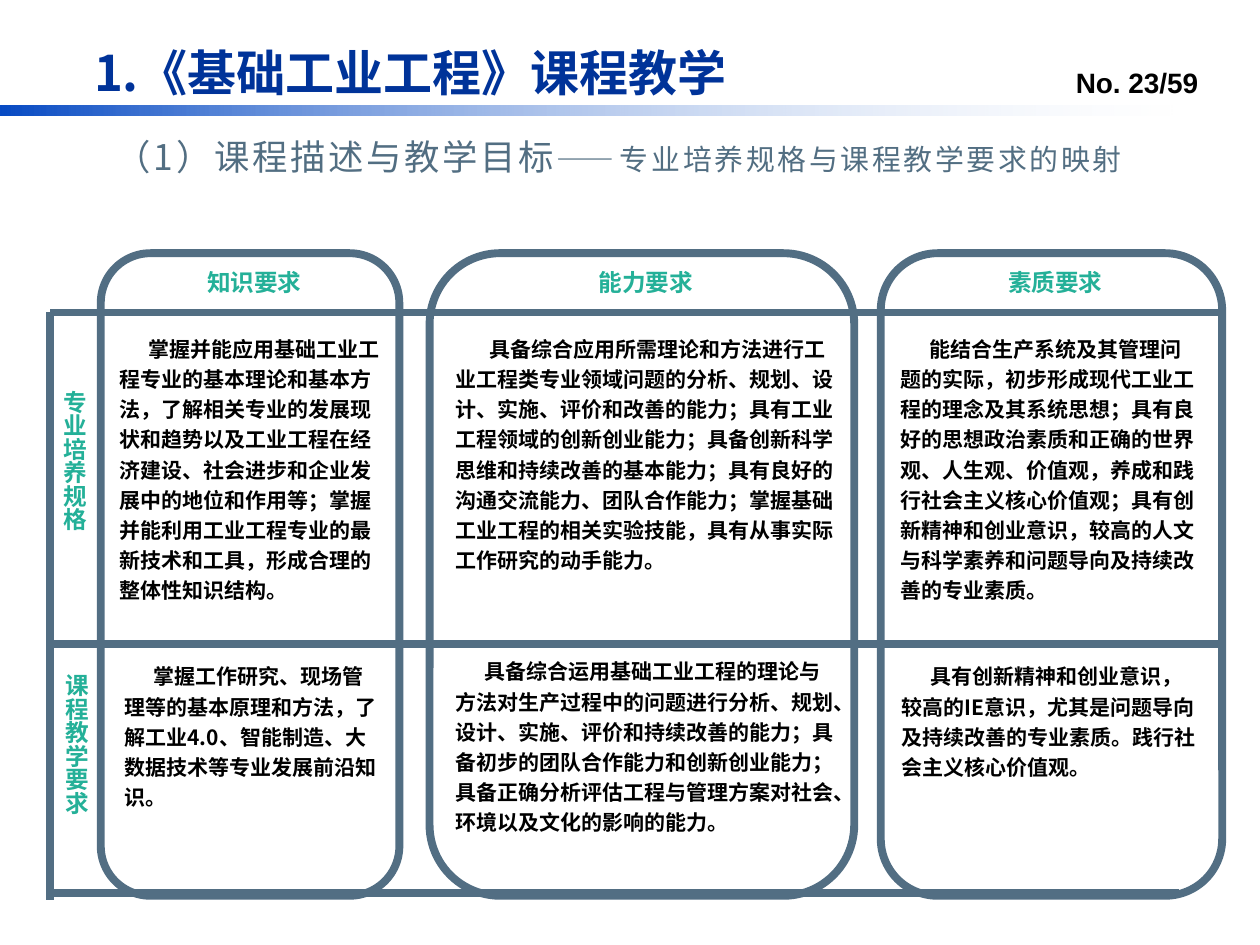
from dataclasses import dataclass

from lxml import etree
from pptx import Presentation
from pptx.dml.color import RGBColor
from pptx.enum.shapes import MSO_CONNECTOR, MSO_SHAPE
from pptx.enum.text import MSO_ANCHOR, MSO_AUTO_SIZE, PP_ALIGN
from pptx.oxml.ns import qn
from pptx.util import Inches, Pt

STRAIGHT = MSO_CONNECTOR.STRAIGHT
RECTANGLE = MSO_SHAPE.RECTANGLE
ROUNDED = MSO_SHAPE.ROUNDED_RECTANGLE
MIDDLE = MSO_ANCHOR.MIDDLE
FIT_TEXT = MSO_AUTO_SIZE.SHAPE_TO_FIT_TEXT
LEFT, CENTER, RIGHT = PP_ALIGN.LEFT, PP_ALIGN.CENTER, PP_ALIGN.RIGHT


@dataclass(frozen=True)
class Style:
    size: float
    color: str
    bold: bool = True
    font: str = "Noto Sans CJK SC"
    tracking: float = 0


@dataclass(frozen=True)
class Theme:
    frame: str = "526E83"
    frame_width: float = 4.5
    band_start: str = "084BC4"
    band_end: str = "D2DFF4"
    title: Style = Style(28, "003399")
    number: Style = Style(16, "000000", font="Arial")
    subtitle: Style = Style(20.2, "526E82", bold=False, tracking=1.6)
    subtitle_detail: Style = Style(16.5, "526E82", bold=False, tracking=1.6)
    label: Style = Style(13.5, "24B098")
    body: Style = Style(12, "000000")


@dataclass(frozen=True)
class Box:
    left: float
    top: float
    width: float
    height: float


@dataclass(frozen=True)
class Passage:
    box: Box
    text: str
    indent: float = 0.23


@dataclass(frozen=True)
class Column:
    heading: str
    left: float
    width: float
    passages: tuple[Passage, ...]


@dataclass(frozen=True)
class Rule:
    start: tuple[float, float]
    end: tuple[float, float]


THEME = Theme()
COLUMN_TOP, COLUMN_HEIGHT = 2.01, 5.1
HEADING_WIDTH, HEADING_SHIFT = 1.02, 0.07

COLUMNS = (
    Column("知识要求", 0.8, 2.37, (
        Passage(Box(0.85, 2.58, 2.32, 2.85),
                "掌握并能应用基础工业工程专业的基本理论和基本方法，了解相关专业的发展现状和趋势以及工业工程在经济建设、"
                "社会进步和企业发展中的地位和作用等；掌握并能利用工业工程专业的最新技术和工具，形成合理的整体性知识结构。"),
        Passage(Box(0.89, 5.18, 2.21, 1.64),
                "掌握工作研究、现场管理等的基本原理和方法，了解工业4.0、智能制造、大数据技术等专业发展前沿知识。"),
    )),
    Column("能力要求", 3.41, 3.37, (
        Passage(Box(3.52, 2.58, 3.2, 2.54),
                "具备综合应用所需理论和方法进行工业工程类专业领域问题的分析、规划、设计、实施、评价和改善的能力；"
                "具有工业工程领域的创新创业能力；具备创新科学思维和持续改善的基本能力；具有良好的沟通交流能力、"
                "团队合作能力；掌握基础工业工程的相关实验技能，具有从事实际工作研究的动手能力。", 0.27),
        Passage(Box(3.52, 5.14, 3.24, 1.94),
                "具备综合运用基础工业工程的理论与方法对生产过程中的问题进行分析、规划、设计、实施、评价和持续改善的能力；"
                "具备初步的团队合作能力和创新创业能力；具备正确分析评估工程与管理方案对社会、环境以及文化的影响的能力。"),
    )),
    Column("素质要求", 6.99, 2.71, (
        Passage(Box(7.05, 2.58, 2.59, 2.85),
                "能结合生产系统及其管理问题的实际，初步形成现代工业工程的理念及其系统思想；具有良好的思想政治素质和"
                "正确的世界观、人生观、价值观，养成和践行社会主义核心价值观；具有创新精神和创业意识，"
                "较高的人文与科学素养和问题导向及持续改善的专业素质。"),
        Passage(Box(7.06, 5.18, 2.59, 1.33),
                "具有创新精神和创业意识，较高的IE意识，尤其是问题导向及持续改善的专业素质。践行社会主义核心价值观。"),
    )),
)

ROW_LABELS = (
    (Box(0.33, 3, 0.47, 1.61), "专业培养规格"),
    (Box(0.34, 5.25, 0.47, 1.61), "课程教学要求"),
)

RULES = (
    Rule((0.4, 5.11), (9.69, 5.11)),
    Rule((0.4, 2.48), (9.69, 2.48)),
    Rule((0.4, 2.48), (0.4, 7.14)),
    Rule((0.41, 7.09), (9.36, 7.09)),
)


def place(box: Box) -> tuple:
    return Inches(box.left), Inches(box.top), Inches(box.width), Inches(box.height)


def add_run(para, text: str, style: Style) -> None:
    span = para.add_run()
    span.text = text
    span.font.size = Pt(style.size)
    span.font.bold = style.bold
    span.font.name = style.font
    span.font.color.rgb = RGBColor.from_string(style.color)
    properties = span.font._element
    etree.SubElement(properties, qn("a:ea")).set("typeface", style.font)
    if style.tracking:
        properties.set("spc", str(round(style.tracking * 100)))


def add_text(page, box: Box, *runs: tuple[str, Style], align=LEFT, wrap: bool = True,
             spacing: float = 1, indent: float = 0, vertical: bool = False):
    """Add a one-paragraph text box and return its text frame."""
    frame = page.shapes.add_textbox(*place(box)).text_frame
    frame.word_wrap = wrap
    frame.auto_size = FIT_TEXT
    if vertical:
        frame._txBody.bodyPr.set("vert", "eaVert")
    para = frame.paragraphs[0]
    para.alignment = align
    para.line_spacing = spacing
    if indent:
        para._p.get_or_add_pPr().set("indent", str(Inches(indent)))
    for text, style in runs:
        add_run(para, text, style)
    return frame


def add_band(page) -> None:
    """Draw the title band, which fades out to the right."""
    band = page.shapes.add_shape(RECTANGLE, *place(Box(0, 0.84, 9.33, 0.08)))
    band.shadow.inherit = False
    band.line.fill.background()
    band.fill.gradient()
    band.fill.gradient_angle = 0
    for stop, color in zip(band.fill.gradient_stops, (THEME.band_start, THEME.band_end)):
        stop.color.rgb = RGBColor.from_string(color)
    last_color = band._element.spPr.findall(".//" + qn("a:srgbClr"))[-1]
    etree.SubElement(last_color, qn("a:alpha")).set("val", "0")


def style_line(line) -> None:
    line.color.rgb = RGBColor.from_string(THEME.frame)
    line.width = Pt(THEME.frame_width)


def add_rule(page, rule: Rule) -> None:
    connector = page.shapes.add_connector(
        STRAIGHT, *(Inches(value) for value in rule.start + rule.end))
    style_line(connector.line)
    etree.SubElement(connector._element.spPr, qn("a:effectLst"))


def add_column(page, column: Column) -> None:
    outline = page.shapes.add_shape(
        ROUNDED, *place(Box(column.left, COLUMN_TOP, column.width, COLUMN_HEIGHT)))
    outline.shadow.inherit = False
    outline.fill.background()
    style_line(outline.line)
    heading_left = column.left + (column.width - HEADING_WIDTH) / 2 + HEADING_SHIFT
    add_text(page, Box(heading_left, 2.08, HEADING_WIDTH, 0.41),
             (column.heading, THEME.label), wrap=False)
    for passage in column.passages:
        add_text(page, passage.box, (passage.text, THEME.body),
                 spacing=1.2, indent=passage.indent)


def main() -> None:
    deck = Presentation()
    deck.slide_width, deck.slide_height = Inches(10), Inches(7.5)
    page = deck.slides.add_slide(deck.slide_layouts[6])

    add_text(page, Box(7.28, 0.47, 2.33, 0.52), ("No. 23/59", THEME.number),
             align=RIGHT).auto_size = MSO_AUTO_SIZE.NONE
    add_band(page)
    subtitle = add_text(page, Box(0.9, 1.04, 8.31, 0.39),
                        ("（1）课程描述与教学目标", THEME.subtitle),
                        ("——专业培养规格与课程教学要求的映射", THEME.subtitle_detail),
                        spacing=1.01)
    subtitle.vertical_anchor = MIDDLE
    subtitle.margin_left = subtitle.margin_right = Inches(0.02)
    subtitle.margin_top = subtitle.margin_bottom = Inches(0.02)

    for column in COLUMNS:
        add_column(page, column)
    for rule in RULES:
        add_rule(page, rule)
    for box, text in ROW_LABELS:
        add_text(page, box, (text, THEME.label), align=CENTER, wrap=False,
                 spacing=1.2, vertical=True)
    add_text(page, Box(0.59, 0.29, 5.33, 0.57), ("1.《基础工业工程》课程教学", THEME.title),
             align=CENTER, wrap=False)
    deck.save("out.pptx")


if __name__ == "__main__":
    main()
